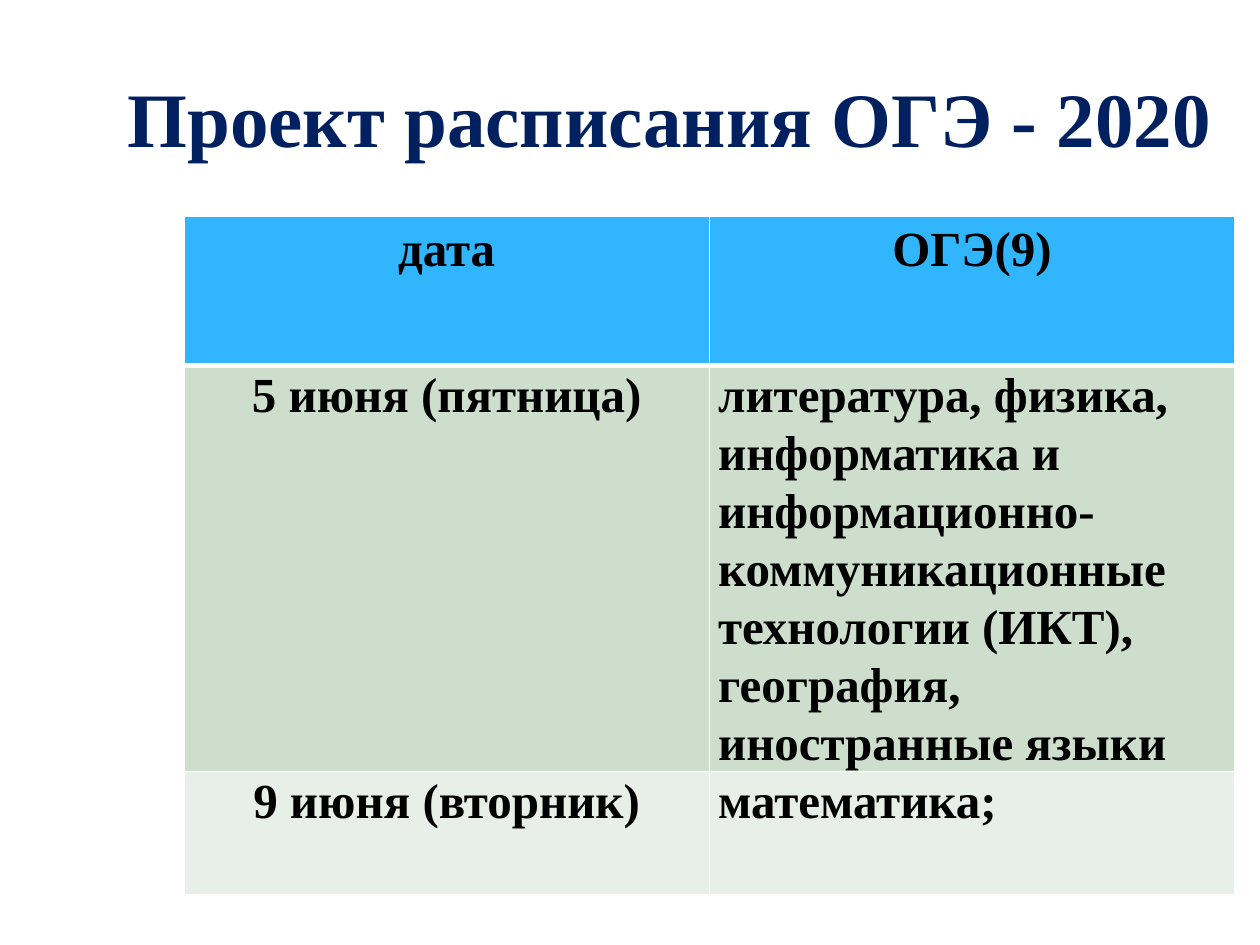
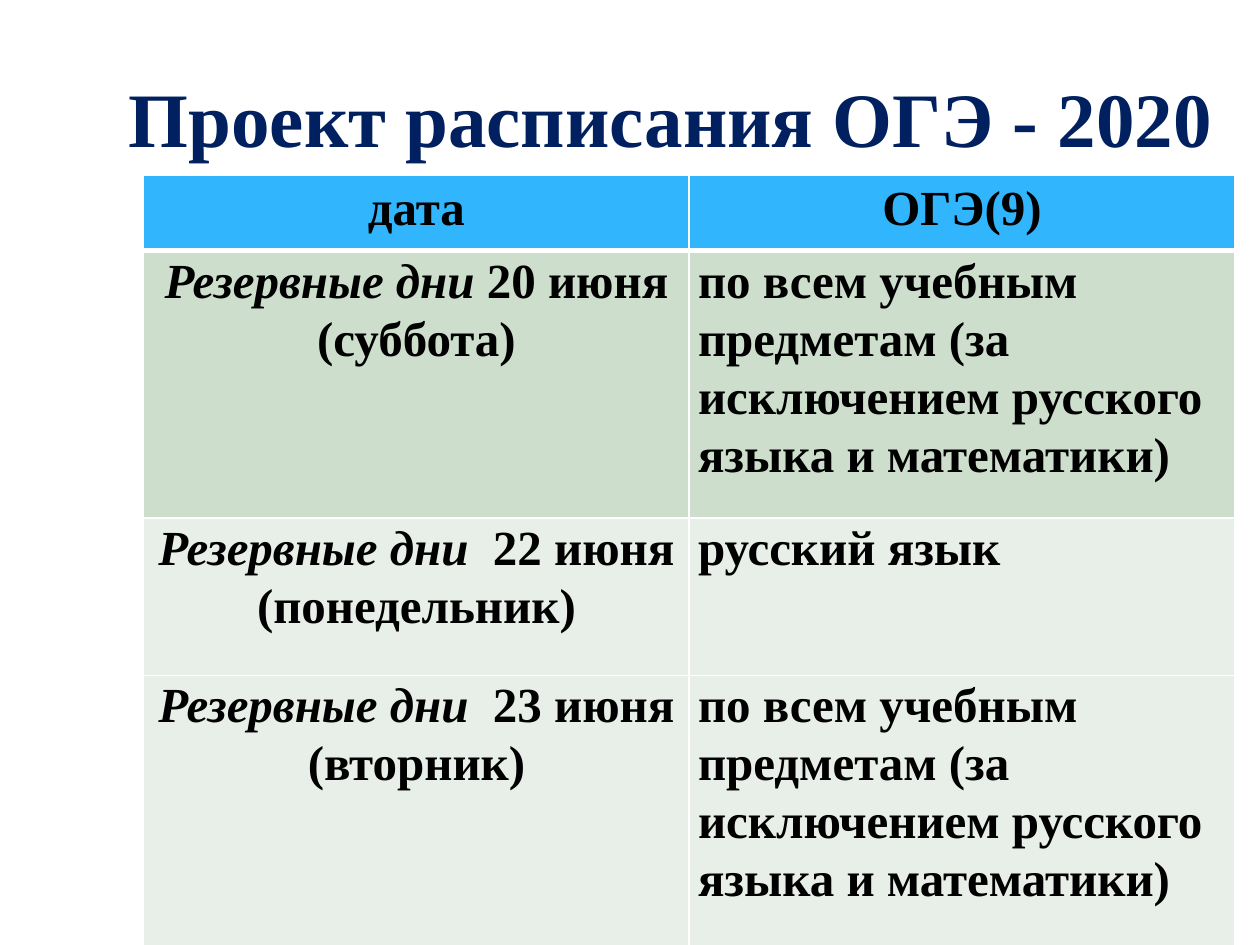
"""Builds two slides with the draft schedule of the OGE exams in 2020."""
from lxml import etree
from pptx import Presentation
from pptx.dml.color import RGBColor
from pptx.enum import text
from pptx.oxml import ns
from pptx.util import Inches, Pt

FONT = "Times New Roman"
WHITE, BLACK, NAVY = "FFFFFF", "000000", "002060"
HEADER, BAND_DARK, BAND_LIGHT = "31B6FD", "CDDECD", "E8EFE8"
TITLE = "Проект расписания ОГЭ - 2020"
COLUMNS = ("дата", "ОГЭ(9)")
RESERVE = "Резервные дни"
ALL_SUBJECTS = "по всем учебным предметам (за исключением русского языка и математики)"

SLIDES = [
    {
        "title_box": (0.67, 0.3, 9.05, 1.25),
        "table_at": (1.46, 1.72),
        "column_width": 4.17,
        "row_heights": (1.18, 1.78, 0.98),
        "days": [
            ("", "5 июня (пятница)",
             "литература, физика, информатика и информационно-коммуникационные "
             "технологии (ИКТ), география, иностранные языки"),
            ("", "9 июня (вторник)", "математика;"),
        ],
    },
    {
        "title_box": (0.83, 0.3, 8.9, 1.25),
        "table_at": (1.14, 1.39),
        "column_width": 4.33,
        "row_heights": (0.6, 2.12, 1.25, 2.64),
        "days": [
            (RESERVE, " 20 июня (суббота)", ALL_SUBJECTS),
            (RESERVE, "  22 июня (понедельник)", "русский язык"),
            (RESERVE, "  23 июня (вторник)", ALL_SUBJECTS),
        ],
    },
]


def color(value):
    return RGBColor.from_string(value)


def write(paragraph, content, size=28, ink=BLACK, italic=False,
          align=text.PP_ALIGN.CENTER, spacing=None):
    paragraph.alignment = align
    if spacing:
        paragraph.line_spacing = spacing
    run = paragraph.add_run()
    run.text = content
    font = run.font
    font.name, font.size, font.bold, font.italic = FONT, Pt(size), True, italic
    font.color.rgb = color(ink)


def fill_solid(item, value):
    item.fill.solid()
    item.fill.fore_color.rgb = color(value)


def set_borders(cell, top, bottom):
    properties = cell._tc.get_or_add_tcPr()
    sides = (("lnL", 1), ("lnR", 1), ("lnT", top), ("lnB", bottom))
    for position, (side, width) in enumerate(sides):
        line = etree.Element(ns.qn(f"a:{side}"), w=str(Pt(width)))
        fill = etree.SubElement(line, ns.qn("a:solidFill"))
        etree.SubElement(fill, ns.qn("a:srgbClr"), val=WHITE)
        properties.insert(position, line)


def add_title(slide, box):
    title = slide.shapes.title
    title.left, title.top, title.width, title.height = map(Inches, box)
    fill_solid(title, WHITE)
    shade = title.fill._xPr.find(".//" + ns.qn("a:srgbClr"))
    etree.SubElement(shade, ns.qn("a:alpha"), val="90000")
    title.line.color.rgb = color(WHITE)
    title.line.width = Pt(1.5)
    frame = title.text_frame
    frame.vertical_anchor = text.MSO_ANCHOR.MIDDLE
    frame.auto_size = text.MSO_AUTO_SIZE.NONE
    write(frame.paragraphs[0], TITLE, size=44, ink=NAVY, align=text.PP_ALIGN.RIGHT)


def format_cell(cell, row):
    if row == 0:
        margins, shade = (0.1, 0.05), HEADER
    else:
        margins, shade = (0.07, 0), BAND_DARK if row == 1 else BAND_LIGHT
    cell.margin_left = cell.margin_right = Inches(margins[0])
    cell.margin_top = cell.margin_bottom = Inches(margins[1])
    fill_solid(cell, shade)
    set_borders(cell, top=3 if row == 1 else 1, bottom=3 if row == 0 else 1)


def add_schedule(slide, content):
    heights, width = content["row_heights"], content["column_width"]
    left, top = content["table_at"]
    size = (len(COLUMNS) * width, sum(heights))
    table = slide.shapes.add_table(
        len(heights), len(COLUMNS), *map(Inches, (left, top, *size))).table
    for column in table.columns:
        column.width = Inches(width)
    for index, height in enumerate(heights):
        table.rows[index].height = Inches(height)
        for cell in table.rows[index].cells:
            format_cell(cell, index)
    for index, heading in enumerate(COLUMNS):
        write(table.cell(0, index).text_frame.paragraphs[0], heading)
    for row, (label, date, subjects) in enumerate(content["days"], 1):
        date_paragraph, subject_paragraph = (
            cell.text_frame.paragraphs[0] for cell in table.rows[row].cells)
        if label:
            write(date_paragraph, label, italic=True, spacing=1.07)
        write(date_paragraph, date, spacing=1.07)
        write(subject_paragraph, subjects, align=text.PP_ALIGN.LEFT, spacing=1.07)


def main():
    presentation = Presentation()
    presentation.slide_width, presentation.slide_height = Inches(10), Inches(7.5)
    for content in SLIDES:
        slide = presentation.slides.add_slide(presentation.slide_layouts[5])
        add_title(slide, content["title_box"])
        add_schedule(slide, content)
    presentation.save("out.pptx")


if __name__ == "__main__":
    main()
